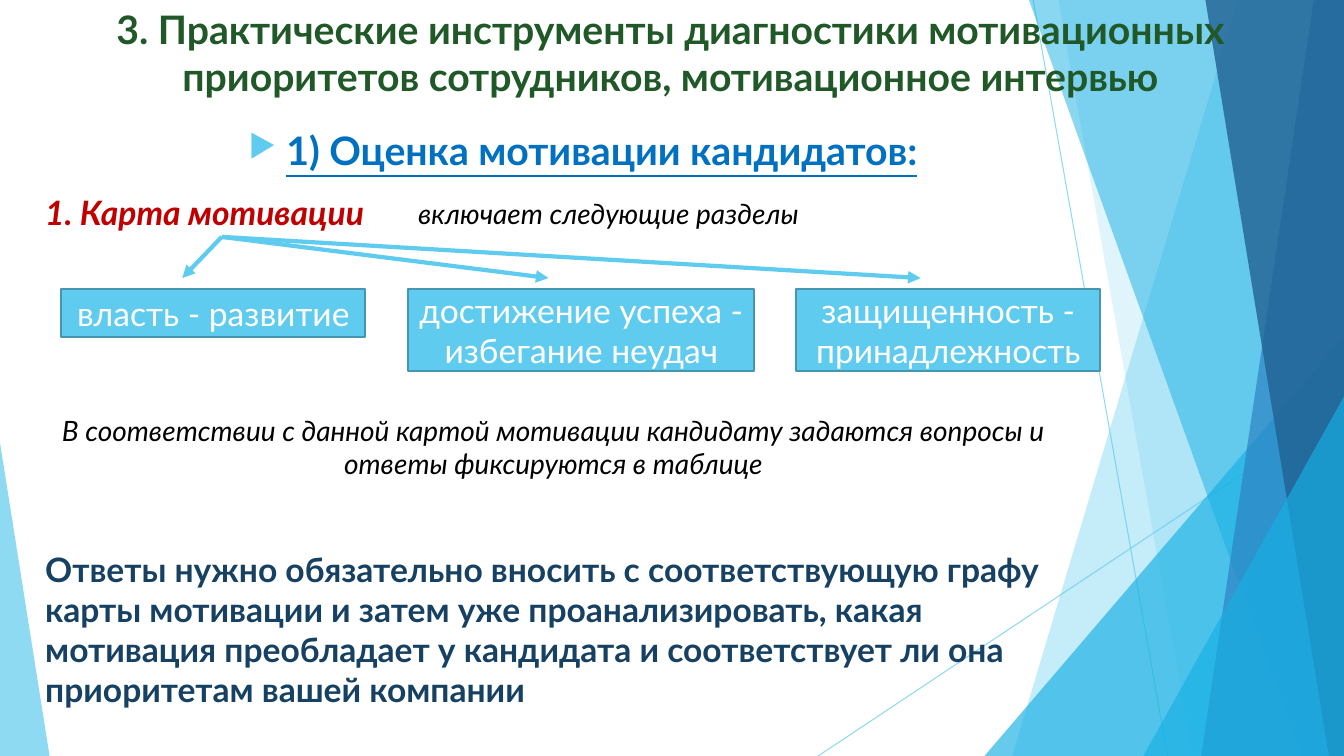
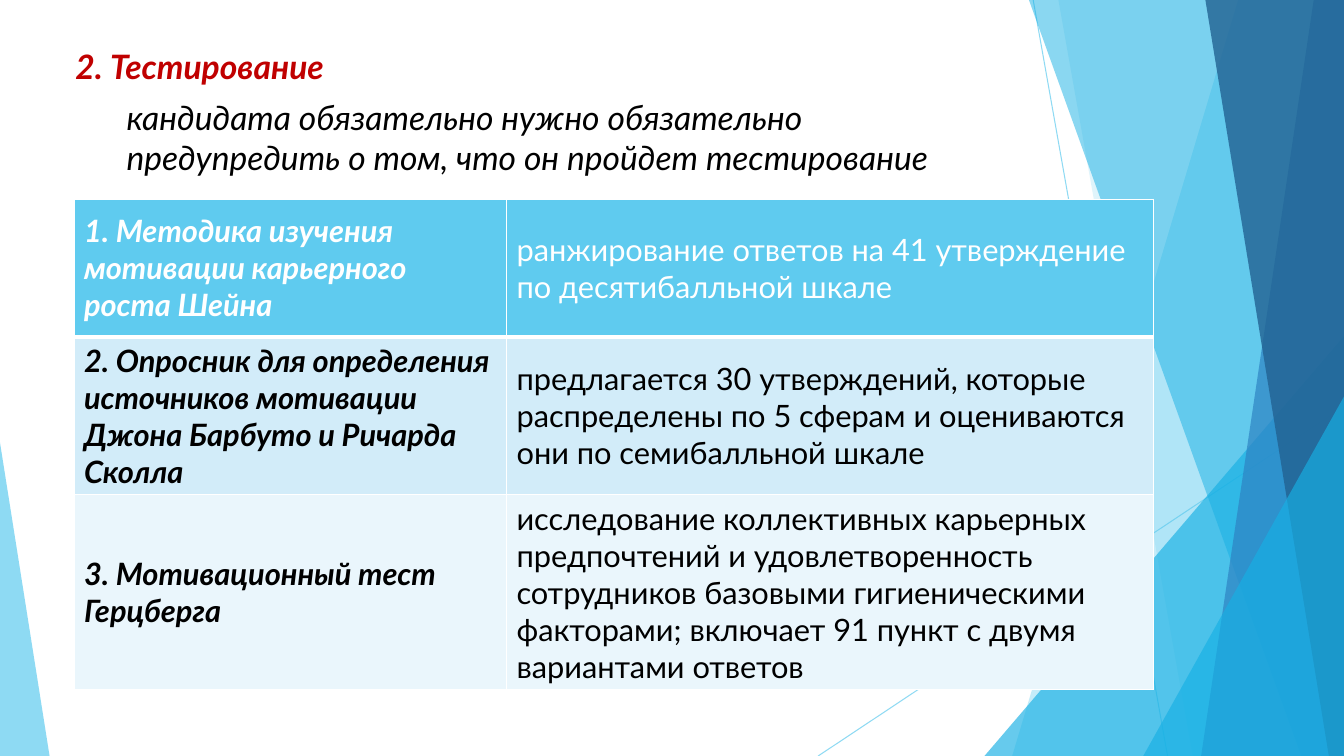
from lxml import etree
from pptx import Presentation
from pptx.dml.color import RGBColor
from pptx.enum.shapes import MSO_CONNECTOR as CONN, MSO_SHAPE as SHAPE
from pptx.enum.text import MSO_ANCHOR as ANCHOR, PP_ALIGN as ALIGN
from pptx.oxml.ns import qn
from pptx.util import Emu, Pt

COLS, ROWS = 80, 45
CELL = 152400


def grid(*lengths):
    return [Emu(round(n * CELL)) for n in lengths]


def rgb(code):
    return RGBColor.from_string(code)


def sub(parent, tag, **attrs):
    el = etree.SubElement(parent, qn(tag))
    for name, value in attrs.items():
        el.set(name, str(value))
    return el


def set_alpha(sp, percent):
    for clr in sp._element.spPr.iter(qn("a:srgbClr")):
        sub(clr, "a:alpha", val=percent * 1000)


class Deck:
    FONT = "Lato"
    SKY, CYAN, BLUE, NAVY = "5FCBEF", "17B0E4", "2E83C3", "226292"
    EDGE, GREEN, LINK, RED, INK = "4696B1", "215828", "0070C0", "C00000", "174162"
    WHITE, BLACK = "FFFFFF", "000000"
    ROW_FILLS = (SKY, "D2ECF9", "EAF6FC")

    def __init__(self):
        self.prs = Presentation()
        self.prs.slide_width, self.prs.slide_height = grid(COLS, ROWS)

    def new_slide(self):
        self.shapes = self.prs.slides.add_slide(self.prs.slide_layouts[6]).shapes
        self.decorate()

    def decorate(self):
        for start, end in (((61.5, 0), (69.5, ROWS)), ((COLS, 24.2), (48.7, ROWS))):
            set_alpha(self.line(start, end, 0.75), 70)
        self.band(73.7, 60.25, self.SKY, 36)
        self.band(63, 71, self.SKY, 20)
        self.corner(58.6, 20, 21.4, 1, self.CYAN, 66)
        self.band(61.25, 77.45, self.CYAN, 50)
        self.band(78.2, 71.5, self.BLUE, 70)
        self.band(71.75, 79.1, self.NAVY, 80)
        self.corner(68.05, 23.6, 11.95, 1, self.CYAN, 66)
        self.corner(0, 26.35, 2.95, 0, self.SKY, 70)

    def paint(self, sp, fill, edge=None, alpha=None):
        sp.shadow.inherit = False
        sp.fill.solid()
        sp.fill.fore_color.rgb = rgb(fill)
        if edge:
            sp.line.color.rgb = rgb(edge)
            sp.line.width = Pt(1.5)
        else:
            sp.line.fill.background()
        if alpha:
            set_alpha(sp, alpha)

    def band(self, top_x, bottom_x, fill, alpha):
        points = [grid(*pt) for pt in ((COLS, 0), (COLS, ROWS), (bottom_x, ROWS))]
        outline = self.shapes.build_freeform(*grid(top_x, 0))
        outline.add_line_segments(points, close=True)
        self.paint(outline.convert_to_shape(), fill, alpha=alpha)

    def corner(self, x, y, w, apex, fill, alpha):
        sp = self.shapes.add_shape(SHAPE.ISOSCELES_TRIANGLE, *grid(x, y, w, ROWS - y))
        sp.adjustments[0] = apex
        self.paint(sp, fill, alpha=alpha)

    def line(self, start, end, width):
        cn = self.shapes.add_connector(CONN.STRAIGHT, *grid(*start, *end))
        cn.line.color.rgb = rgb(self.SKY)
        cn.line.width = Pt(width)
        sub(cn._element.spPr, "a:effectLst")
        return cn

    def arrow(self, source, start, end):
        cn = self.line(start, end, 3)
        cn.begin_connect(source, 2)
        sub(cn._element.spPr.find(qn("a:ln")), "a:tailEnd", type="triangle")

    def set_text(self, tf, text, size, color, align=ALIGN.LEFT, bold=False,
                 italic=False, underline=None, bullet=False):
        tf.word_wrap = True
        p = tf.paragraphs[0]
        p.text, p.alignment = text, align
        if bullet:
            self.bullet(p)
        font = p.font
        font.name, font.size = self.FONT, Pt(size)
        font.bold, font.italic, font.underline = bold, italic, underline
        font.color.rgb = rgb(color)

    def bullet(self, p):
        pPr = p._p.get_or_add_pPr()
        indent = round(2.25 * CELL)
        pPr.set("marL", str(indent))
        pPr.set("indent", str(-indent))
        sub(sub(pPr, "a:buClr"), "a:srgbClr", val=self.SKY)
        sub(pPr, "a:buSzPct", val=80000)
        sub(pPr, "a:buChar", char="▶")

    def text(self, at, text, size, color, **style):
        sp = self.shapes.add_textbox(*grid(*at))
        self.set_text(sp.text_frame, text, size, color, **style)
        return sp

    def heading(self, at, text):
        return self.text(at, text, 24, self.RED, bold=True, italic=True)

    def box(self, at, text):
        sp = self.shapes.add_shape(SHAPE.RECTANGLE, *grid(*at))
        self.paint(sp, self.SKY, self.EDGE)
        sp.text_frame.vertical_anchor = ANCHOR.MIDDLE
        self.set_text(sp.text_frame, text, 24, self.WHITE, align=ALIGN.CENTER)

    def borders(self, cell, top, bottom):
        tcPr = cell._tc.get_or_add_tcPr()
        for side, width in (("L", 1), ("R", 1), ("T", top), ("B", bottom)):
            ln = sub(tcPr, f"a:ln{side}", w=Pt(width))
            sub(sub(ln, "a:solidFill"), "a:srgbClr", val=self.WHITE)

    def table(self, x, y, widths, heights, rows):
        size = grid(x, y, sum(widths), sum(heights))
        tbl = self.shapes.add_table(len(rows), len(widths), *size).table
        tbl.first_row = tbl.horz_banding = False
        for col, width in zip(tbl.columns, grid(*widths)):
            col.width = width
        for i, (row, height) in enumerate(zip(tbl.rows, grid(*heights))):
            row.height = height
            for j, cell in enumerate(row.cells):
                self.borders(cell, 3 if i == 1 else 1, 3 if i == 0 else 1)
                cell.fill.solid()
                cell.fill.fore_color.rgb = rgb(self.ROW_FILLS[i])
                cell.vertical_anchor = ANCHOR.MIDDLE
                color = self.BLACK if i else self.WHITE
                self.set_text(cell.text_frame, rows[i][j], 22, color,
                              bold=j == 0, italic=j == 0)


def motivation_map(deck):
    deck.new_slide()
    deck.text((1, 0, 77.8, 6.4),
              "3. Практические инструменты диагностики мотивационных приоритетов "
              "сотрудников, мотивационное интервью",
              28, deck.GREEN, align=ALIGN.CENTER, bold=True)
    deck.text((6.5, 7.25, 56.4, 3), "1) Оценка мотивации кандидатов:", 28, deck.LINK,
              align=ALIGN.CENTER, bold=True, underline=True, bullet=True)
    heading = deck.heading((2.1, 11.1, 22.2, 3), "1. Карта мотивации")
    sections = (
        ((3.65, 17.2, 18.1, 2.85), 10.85, "власть - развитие"),
        ((24.3, 17.2, 20.6, 4.9), 32.65, "достижение успеха - избегание неудач"),
        ((47.4, 17.2, 18.1, 4.9), 54.8, "защищенность - принадлежность"),
    )
    for at, tip, label in sections:
        deck.box(at, label)
        deck.arrow(heading, (13.2, 14.1), (tip, 16.55))
    deck.text((24.3, 11.4, 25.9, 2.65), "включает следующие разделы",
              20, deck.BLACK, italic=True)
    deck.text((2.95, 24.3, 60, 4.6),
              "В соответствии с данной картой мотивации кандидату задаются вопросы "
              "и ответы фиксируются в таблице",
              20, deck.BLACK, align=ALIGN.CENTER, italic=True)
    deck.text((2.1, 32.35, 63.4, 10.3),
              "Ответы нужно обязательно вносить с соответствующую графу карты мотивации "
              "и затем уже проанализировать, какая мотивация преобладает у кандидата "
              "и соответствует ли она приоритетам вашей компании",
              24, deck.INK, bold=True)


def testing(deck):
    deck.new_slide()
    deck.heading((3.9, 2.45, 18.1, 3), "2. Тестирование")
    deck.text((6.95, 5.45, 53.65, 5.45),
              "кандидата обязательно нужно обязательно предупредить о том, "
              "что он пройдет тестирование",
              24, deck.BLACK, italic=True)
    deck.table(4.4, 11.85, (25.75, 38.5), (8.2, 9.4, 11.6), (
        ("1. Методика изучения мотивации карьерного роста Шейна",
         "ранжирование ответов на 41 утверждение по десятибалльной шкале"),
        ("2. Опросник для определения источников мотивации Джона Барбуто и Ричарда Сколла",
         "предлагается 30 утверждений, которые распределены по 5 сферам "
         "и оцениваются они по семибалльной шкале"),
        ("3. Мотивационный тест Герцберга",
         "исследование коллективных карьерных предпочтений и удовлетворенность "
         "сотрудников базовыми гигиеническими факторами; включает 91 пункт "
         "с двумя вариантами ответов"),
    ))


def main():
    deck = Deck()
    motivation_map(deck)
    testing(deck)
    deck.prs.save("out.pptx")


if __name__ == "__main__":
    main()
